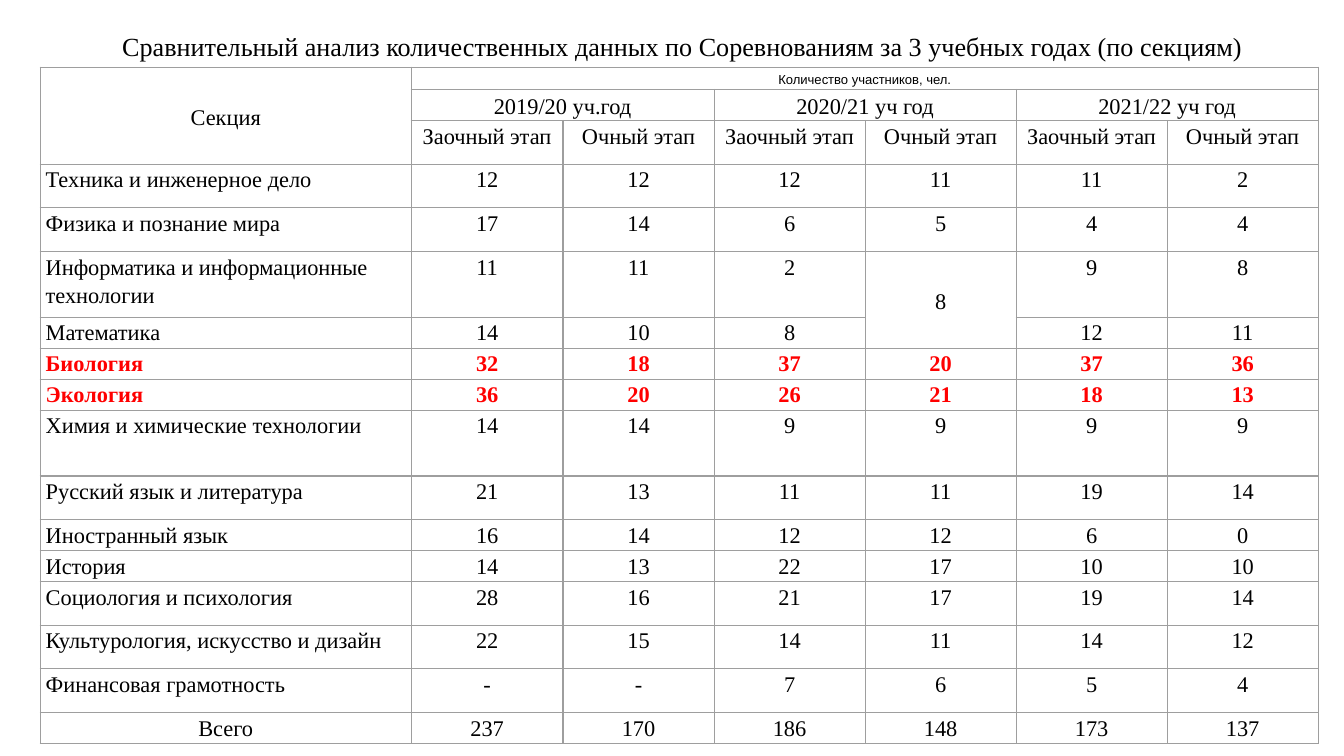
import copy

import pptx
import pptx.util
import pptx.dml.color
import pptx.enum.text
import lxml.etree

TITLE = "Сравнительный анализ количественных данных по Соревнованиям за 3 учебных годах (по секциям)"
YEARS = ["2019/20 уч.год", "2020/21 уч год", "2021/22 уч год"]
STAGES = ["Заочный этап", "Очный этап"]
SECTIONS = [
    ("Техника и инженерное дело", 2, [12, 12, 12, 11, 11, 2]),
    ("Физика и познание мира", 2, [17, 14, 6, 5, 4, 4]),
    ("Информатика и информационные технологии", 3, [11, 11, 2, 8, 9, 8]),
    ("Математика", 1, [14, 10, 8, None, 12, 11]),
    ("Биология", 1, [32, 18, 37, 20, 37, 36]),
    ("Экология", 1, [36, 20, 26, 21, 18, 13]),
    ("Химия и химические технологии", 3, [14, 14, 9, 9, 9, 9]),
    ("Русский язык и литература", 2, [21, 13, 11, 11, 19, 14]),
    ("Иностранный язык", 1, [16, 14, 12, 12, 6, 0]),
    ("История", 1, [14, 13, 22, 17, 10, 10]),
    ("Социология и психология", 2, [28, 16, 21, 17, 19, 14]),
    ("Культурология, искусство и дизайн", 2, [22, 15, 14, 11, 14, 12]),
    ("Финансовая грамотность", 2, ["-", "-", 7, 6, 5, 4]),
    ("Всего", 1, [237, 170, 186, 148, 173, 137]),
]
HIGHLIGHTED = {"Биология", "Экология"}
HEADER_LINES = [1, 1, 2]
LINE_HEIGHTS = {1: 0.5 / 3, 2: 0.65 / 2, 3: 0.49}
TABLE_WIDTH = 9.51
FIRST_WIDTHS = [2.76, 1.13]
COLUMN_WIDTHS = FIRST_WIDTHS + [(TABLE_WIDTH - sum(FIRST_WIDTHS)) / 5] * 5
SERIF = "Times New Roman"
NAMESPACE = "{http://schemas.openxmlformats.org/drawingml/2006/main}"
CENTER = pptx.enum.text.PP_ALIGN.CENTER
LEFT = pptx.enum.text.PP_ALIGN.LEFT
MIDDLE = pptx.enum.text.MSO_ANCHOR.MIDDLE
TOP = pptx.enum.text.MSO_ANCHOR.TOP
Inches = pptx.util.Inches
Pt = pptx.util.Pt


def color(value):
    return pptx.dml.color.RGBColor.from_string(value)


def add_span(para, text, size, font=SERIF, ink="000000", bold=False):
    span = para.add_run()
    span.text = str(text)
    span.font.size = Pt(size)
    span.font.name = font
    span.font.bold = bold
    span.font.color.rgb = color(ink)
    ending = lxml.etree.SubElement(para._p, NAMESPACE + "endParaRPr")
    properties = span._r.get_or_add_rPr()
    for name, value in properties.attrib.items():
        ending.set(name, value)
    ending.extend(copy.deepcopy(list(properties)))


def style_cell(cell):
    cell.margin_left = cell.margin_right = Inches(0.04)
    cell.margin_top = cell.margin_bottom = 0
    properties = cell._tc.get_or_add_tcPr()
    for side in ("lnL", "lnR", "lnT", "lnB"):
        line = lxml.etree.SubElement(properties, NAMESPACE + side, w=str(Pt(0.75)))
        fill = lxml.etree.SubElement(line, NAMESPACE + "solidFill")
        lxml.etree.SubElement(fill, NAMESPACE + "srgbClr", val="9E9E9E")
    cell.fill.background()


def write_cell(cell, text, align=CENTER, anchor=TOP, after=0, size=12, **look):
    cell.vertical_anchor = anchor
    para = cell.text_frame.paragraphs[0]
    para.alignment = align
    para.line_spacing = 1.15
    para.space_after = Pt(after)
    add_span(para, text, size, **look)
    return para


def add_title(page):
    title = page.shapes.title
    title.left, title.top = Inches(0.79), Inches(0.17)
    title.width, title.height = Inches(8.58), Inches(0.34)
    frame = title.text_frame
    frame.word_wrap = False
    frame.auto_size = pptx.enum.text.MSO_AUTO_SIZE.SHAPE_TO_FIT_TEXT
    frame.vertical_anchor = MIDDLE
    para = frame.paragraphs[0]
    para.alignment = CENTER
    add_span(para, TITLE, 14)


def add_results(page):
    heights = [LINE_HEIGHTS[n] for n in HEADER_LINES + [lines for _, lines, _ in SECTIONS]]
    table = page.shapes.add_table(
        len(heights), len(COLUMN_WIDTHS), Inches(0.3), Inches(0.5),
        Inches(TABLE_WIDTH), Inches(4.99)).table
    table.first_row = table.horz_banding = False
    for column, width in zip(table.columns, COLUMN_WIDTHS):
        column.width = Inches(width)
    for row, height in zip(table.rows, heights):
        row.height = Inches(height)
    for cell in table.iter_cells():
        style_cell(cell)

    table.cell(0, 0).merge(table.cell(2, 0))
    write_cell(table.cell(0, 0), "Секция", anchor=MIDDLE)
    table.cell(0, 1).merge(table.cell(0, 6))
    write_cell(table.cell(0, 1), "Количество участников, чел.", anchor=MIDDLE, size=7, font="Arial")
    for index, year in enumerate(YEARS):
        first = 1 + index * len(STAGES)
        table.cell(1, first).merge(table.cell(1, first + 1))
        para = write_cell(table.cell(1, first), year, anchor=MIDDLE)
        para._p.get_or_add_pPr().set("indent", str(Inches(-0.08)))
        for offset, stage in enumerate(STAGES):
            write_cell(table.cell(2, first + offset), stage)

    for row, (section, _, counts) in enumerate(SECTIONS, len(HEADER_LINES)):
        marked = section in HIGHLIGHTED
        look = {"ink": "FF0000" if marked else "000000", "bold": marked}
        write_cell(table.cell(row, 0), section, CENTER if section == "Всего" else LEFT, **look)
        for column, count in enumerate(counts, 1):
            if count is None:
                shared = table.cell(row - 1, column)
                shared.merge(table.cell(row, column))
                shared.vertical_anchor = MIDDLE
            else:
                write_cell(table.cell(row, column), count, after=10, **look)


def main():
    deck = pptx.Presentation()
    deck.slide_width = Inches(10)
    deck.slide_height = deck.slide_width * 9 // 16
    page = deck.slides.add_slide(deck.slide_layouts[5])
    add_title(page)
    add_results(page)
    deck.save("out.pptx")


if __name__ == "__main__":
    main()
